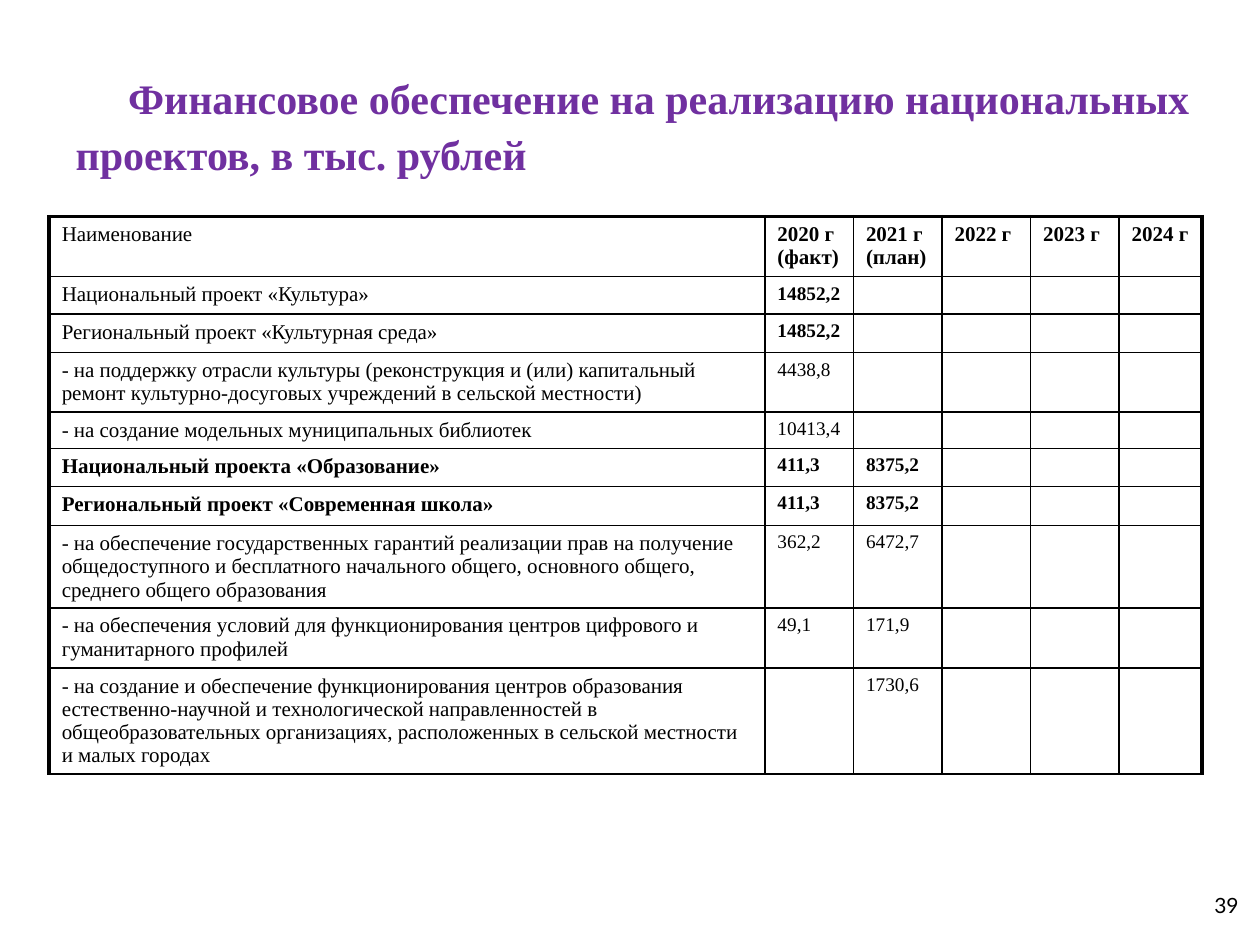
import pptx
import pptx.util
import pptx.dml.color
import pptx.enum.text
import pptx.oxml.ns
import lxml.etree

Pt = pptx.util.Pt
qn = pptx.oxml.ns.qn
PP_ALIGN = pptx.enum.text.PP_ALIGN

COLOURS = {"title": "7030A0", "text": "000000", "border": "000000"}
SERIF = "Times New Roman"
OUTER_LINE, INNER_LINE = 2.25, 1

COLUMN_WIDTHS = [409] + [50.6] * 4 + [47.3]
YEARS = ["2020 г (факт)", "2021 г (план)", "2022 г", "2023 г", "2024 г"]
# Row height, name, name is bold, amounts are bold, amounts by year
PROJECTS = [
    (34.3, "Наименование", False, True, YEARS),
    (21.4, "Национальный проект «Культура»", False, True, ["14852,2"]),
    (22, "Региональный проект «Культурная среда»", False, True, ["14852,2"]),
    (34, "- на поддержку отрасли культуры (реконструкция и (или) капитальный "
         "ремонт культурно-досуговых учреждений в сельской местности)",
     False, False, ["4438,8"]),
    (20.6, "- на создание модельных муниципальных библиотек",
     False, False, ["10413,4"]),
    (21.7, "Национальный проекта «Образование»", True, True, ["411,3", "8375,2"]),
    (22.3, "Региональный проект «Современная школа»", True, True,
     ["411,3", "8375,2"]),
    (46.9, "- на обеспечение государственных гарантий реализации прав на "
           "получение общедоступного и бесплатного начального общего, "
           "основного общего, среднего общего образования",
     False, False, ["362,2", "6472,7"]),
    (34.3, "- на обеспечения условий для функционирования центров цифрового и "
           "гуманитарного профилей", False, False, ["49,1", "171,9"]),
    (60.3, "- на создание и обеспечение функционирования центров образования "
           "естественно-научной и технологической направленностей в "
           "общеобразовательных организациях, расположенных в сельской "
           "местности и малых городах", False, False, ["", "1730,6"]),
]


def apply_format(target, values):
    for name, value in values.items():
        setattr(target, name, value)


def write(paragraph, text, colour, **font_values):
    run = paragraph.add_run()
    run.text = text
    apply_format(run.font, font_values)
    run.font.color.rgb = pptx.dml.color.RGBColor.from_string(COLOURS[colour])


def set_borders(cell, widths):
    properties = cell._tc.get_or_add_tcPr()
    for position, (side, width) in enumerate(widths.items()):
        line = lxml.etree.Element(qn(f"a:{side}"), w=str(Pt(width)))
        fill = lxml.etree.SubElement(line, qn("a:solidFill"))
        lxml.etree.SubElement(fill, qn("a:srgbClr"), val=COLOURS["border"])
        properties.insert(position, line)


def place_title(slide, box):
    title = slide.shapes.title
    apply_format(title, dict(zip(("left", "top", "width", "height"), box)))
    apply_format(title.text_frame, {
        "word_wrap": True,
        "auto_size": pptx.enum.text.MSO_AUTO_SIZE.NONE,
        "vertical_anchor": pptx.enum.text.MSO_ANCHOR.MIDDLE,
    })
    heading = title.text_frame.paragraphs[0]
    apply_format(heading, {"alignment": PP_ALIGN.LEFT, "line_spacing": 1.1})
    heading._p.get_or_add_pPr().set("indent", str(Pt(30)))
    write(heading, "Финансовое обеспечение на реализацию национальных проектов, "
          "в тыс. рублей", "title", name=SERIF, size=Pt(24), bold=True)


def fill_cell(cell, text, size, bold):
    cell.fill.background()
    paragraph = cell.text_frame.paragraphs[0]
    if text:
        write(paragraph, text, "text", name=SERIF, size=Pt(size), bold=bold)
    else:
        # Keeps an empty cell from stretching its row
        lxml.etree.SubElement(paragraph._p, qn("a:endParaRPr"), sz=str(size * 100))


def place_projects(slide, box):
    last_column = len(COLUMN_WIDTHS) - 1
    table = slide.shapes.add_table(len(PROJECTS), len(COLUMN_WIDTHS), *box).table
    apply_format(table, {"first_row": False, "horz_banding": False})
    for column, width in zip(table.columns, COLUMN_WIDTHS):
        column.width = Pt(width)

    for r, (height, name, name_bold, amounts_bold, amounts) in enumerate(PROJECTS):
        table.rows[r].height = Pt(height)
        texts = [name] + amounts + [""] * (last_column - len(amounts))
        for c, text in enumerate(texts):
            cell = table.cell(r, c)
            size = 12 if r == 0 or c == 0 else 11
            fill_cell(cell, text, size, amounts_bold if c else name_bold)
            set_borders(cell, {
                "lnL": OUTER_LINE if c == 0 else INNER_LINE,
                "lnR": OUTER_LINE if c == last_column else INNER_LINE,
                "lnT": OUTER_LINE if r == 0 else INNER_LINE,
                "lnB": INNER_LINE,
            })


def place_page_number(slide, box):
    frame = slide.shapes.add_textbox(*box).text_frame
    apply_format(frame, {"word_wrap": True, "margin_left": 0, "margin_top": 0,
                         "margin_right": 0, "margin_bottom": 0})
    frame.paragraphs[0].alignment = PP_ALIGN.RIGHT
    write(frame.paragraphs[0], "39", "text", name="Lato", size=Pt(12))


def main():
    presentation = pptx.Presentation()
    apply_format(presentation, {"slide_width": Pt(720), "slide_height": Pt(540)})
    slide = presentation.slides.add_slide(presentation.slide_layouts[5])

    place_title(slide, (Pt(36), Pt(37.4), Pt(684), Pt(66.2)))
    place_projects(slide, (Pt(28.1), Pt(123.8), Pt(sum(COLUMN_WIDTHS)),
                           Pt(sum(project[0] for project in PROJECTS))))
    place_page_number(slide, (Pt(648), Pt(509.8), Pt(59.8), Pt(19.4)))

    presentation.save("out.pptx")


if __name__ == "__main__":
    main()
